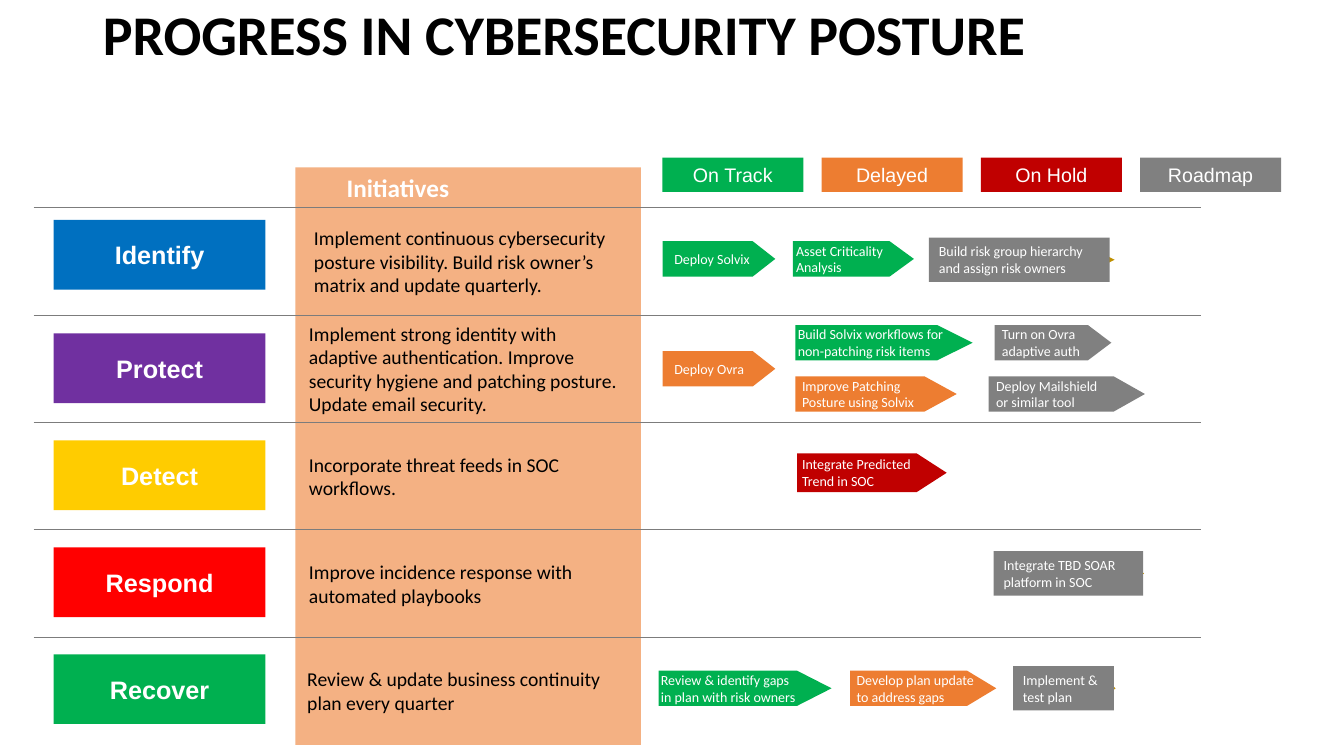
from dataclasses import dataclass
from lxml import etree
from pptx import Presentation
from pptx.dml.color import RGBColor
from pptx.enum.shapes import MSO_CONNECTOR, MSO_SHAPE
from pptx.enum.text import MSO_ANCHOR, MSO_AUTO_SIZE, PP_ALIGN
from pptx.oxml.ns import qn
from pptx.util import Inches, Pt

RECT = MSO_SHAPE.RECTANGLE
POINTER = MSO_SHAPE.FLOWCHART_OFFPAGE_CONNECTOR
STRAIGHT = MSO_CONNECTOR.STRAIGHT
TOP, MIDDLE = MSO_ANCHOR.TOP, MSO_ANCHOR.MIDDLE
LEFT, CENTER = PP_ALIGN.LEFT, PP_ALIGN.CENTER
NO_FIT = MSO_AUTO_SIZE.NONE

COLS, ROWS = 160, 90
TABLE_TOP, BAND = 24.72, 12.78
COLUMN_RIGHT = 75


@dataclass(frozen=True)
class Theme:
    heading: str = "Calibri"
    label: str = "Arial"
    title_size: int = 40
    head_size: int = 18
    body_size: int = 14
    step_size: int = 10
    black: str = "000000"
    white: str = "FFFFFF"
    rule: str = "7C7C7C"
    column: str = "F4B183"
    track: str = "00B050"
    delayed: str = "ED7D31"
    hold: str = "C00000"
    roadmap: str = "808080"
    under_plate: str = "BF9000"
    identify: str = "0070C0"
    protect: str = "7030A0"
    detect: str = "FFCC00"
    respond: str = "FF0000"
    recover: str = "00B050"


@dataclass(frozen=True)
class Step:
    text: str
    color: str
    x: float
    w: float
    text_x: float
    text_w: float
    y: float
    h: float = 4.2
    plate: bool = False


@dataclass(frozen=True)
class Function:
    name: str
    color: str
    label_y: float
    goal_x: float
    goal: str
    steps: tuple


def write(tf, text, font, size, color, bold=False, align=LEFT, anchor=MIDDLE, spacing=None):
    tf.word_wrap = True
    tf.auto_size = NO_FIT
    tf.vertical_anchor = anchor
    p = tf.paragraphs[0]
    p.alignment = align
    p.line_spacing = spacing
    r = p.add_run()
    r.text = text
    r.font.name, r.font.size, r.font.bold = font, Pt(size), bold
    r.font.color.rgb = RGBColor.from_string(color)


class Board:
    def __init__(self, prs, theme):
        self.theme = theme
        self.cell_w = prs.slide_width / COLS
        self.cell_h = prs.slide_height / ROWS
        self.s = prs.slides.add_slide(prs.slide_layouts[5])

    def place(self, x, y, w, h):
        return (round(x * self.cell_w), round(y * self.cell_h),
                round(w * self.cell_w), round(h * self.cell_h))

    def title(self, text, x, y, w, h):
        sp = self.s.shapes.title
        sp.left, sp.top, sp.width, sp.height = self.place(x, y, w, h)
        write(sp.text_frame, text, self.theme.heading, self.theme.title_size,
              self.theme.black, bold=True, anchor=TOP, spacing=0.9)

    def shape(self, kind, color, x, y, w, h):
        sp = self.s.shapes.add_shape(kind, *self.place(x, y, w, h))
        sp.shadow.inherit = False
        sp.fill.solid()
        sp.fill.fore_color.rgb = RGBColor.from_string(color)
        sp.line.fill.background()
        return sp

    def box(self, text, color, x, y, w, h, size, bold=False):
        sp = self.shape(RECT, color, x, y, w, h)
        write(sp.text_frame, text, self.theme.label, size, self.theme.white, bold, CENTER)

    def text(self, text, x, y, w, h, size, color, bold=False):
        sp = self.s.shapes.add_textbox(*self.place(x, y, w, h))
        write(sp.text_frame, text, self.theme.heading, size, color, bold)

    def rule(self, x1, x2, y):
        left, top, width, _ = self.place(x1, y, x2 - x1, 0)
        line = self.s.shapes.add_connector(STRAIGHT, left, top, left + width, top)
        line.line.color.rgb = RGBColor.from_string(self.theme.rule)
        line.line.width = Pt(0.5)
        etree.SubElement(line._element.spPr, qn("a:effectLst"))

    def pointer(self, color, x, middle, w, h):
        sp = self.shape(POINTER, color, x + (w - h) / 2, middle - w / 2, h, w)
        sp.rotation = 270

    def step(self, step, band_top):
        t = self.theme
        middle = band_top + step.y
        self.pointer(t.under_plate if step.plate else step.color, step.x, middle, step.w, step.h)
        area = (step.text_x, middle - 2.64, step.text_w, 5.28)
        if step.plate:
            sp = self.shape(RECT, step.color, *area)
            write(sp.text_frame, step.text, t.heading, t.step_size, t.white)
        else:
            self.text(step.text, *area, t.step_size, t.white)

    def function(self, function, band_top):
        t = self.theme
        self.box(function.name, function.color, 6.4, band_top + function.label_y, 25.2, 8.3,
                 t.head_size, bold=True)
        self.text(function.goal, function.goal_x, band_top, COLUMN_RIGHT - function.goal_x, BAND,
                  t.body_size, t.black)
        for step in function.steps:
            self.step(step, band_top)


T = Theme()
LEGEND = (("On Track", T.track), ("Delayed", T.delayed),
          ("On Hold", T.hold), ("Roadmap", T.roadmap))
FUNCTIONS = (
    Function("Identify", T.identify, 1.45, 36.2,
             "Implement continuous cybersecurity posture visibility. "
             "Build risk owner’s matrix and update quarterly.", (
                 Step("Deploy Solvix", T.track, 78.9, 13.4, 79.1, 13.2, 6.1),
                 Step("Asset Criticality Analysis", T.track, 94.4, 14.4, 93.6, 17.2, 6.1),
                 Step("Build risk group hierarchy and assign risk owners", T.roadmap,
                      111.2, 21.5, 110.6, 21.5, 6.2, plate=True))),
    Function("Protect", T.protect, 2.2, 35.6,
             "Implement strong identity with adaptive authentication. Improve security "
             "hygiene and patching posture. Update email security.", (
                 Step("Deploy Ovra", T.delayed, 78.9, 13.4, 79.1, 13.2, 6.4),
                 Step("Build Solvix workflows for non-patching risk items", T.track,
                      94.7, 21.1, 93.8, 22.4, 3.3),
                 Step("Turn on Ovra adaptive auth", T.roadmap, 118.4, 13.9, 118.1, 12, 3.3),
                 Step("Improve Patching Posture using Solvix", T.delayed,
                      94.7, 19.2, 94.3, 16.4, 9.4),
                 Step("Deploy Mailshield or similar tool", T.roadmap,
                      117.7, 18.6, 117.4, 15.4, 9.4))),
    Function("Detect", T.detect, 2.15, 35.6, "Incorporate threat feeds in SOC workflows.", (
        Step("Integrate Predicted Trend in SOC", T.hold, 94.9, 17.8, 94.3, 17.8, 6, h=4.6),)),
    Function("Respond", T.respond, 2.1, 35.6,
             "Improve incidence response with automated playbooks", (
                 Step("Integrate TBD SOAR platform in SOC", T.roadmap,
                      118.4, 17.8, 118.3, 17.8, 5.2, h=4.6, plate=True),)),
    Function("Recover", T.recover, 2.05, 35.4,
             "Review & update business continuity plan every quarter", (
                 Step("Review & identify gaps in plan with risk owners", T.track,
                      78.4, 20.6, 77.5, 18.6, 6.1),
                 Step("Develop plan update to address gaps", T.delayed,
                      101.2, 17.4, 100.8, 16.8, 6.1),
                 Step("Implement & test plan", T.roadmap,
                      121, 11.8, 120.6, 12, 6.1, plate=True))),
)


def main():
    prs = Presentation()
    prs.slide_width, prs.slide_height = Inches(13.33), Inches(7.5)
    board = Board(prs, T)
    board.shape(RECT, T.column, 35.16, 19.92, 41.16, 68.76)
    board.title("PROGRESS IN CYBERSECURITY POSTURE", 11.04, 0.24, 138, 13.08)
    board.text("Initiatives", 40.08, 19.92, 34, 4.8, T.head_size, T.white, bold=True)
    bands = [TABLE_TOP + i * BAND for i in range(len(FUNCTIONS))]
    for band_top in bands:
        board.rule(4, 143, band_top)
    for function, band_top in zip(FUNCTIONS, bands):
        board.function(function, band_top)
    for i, (status, color) in enumerate(LEGEND):
        board.box(status, color, 78.84 + i * 18.96, 18.78, 16.8, 4.08, T.body_size)
    prs.save("out.pptx")


if __name__ == "__main__":
    main()
